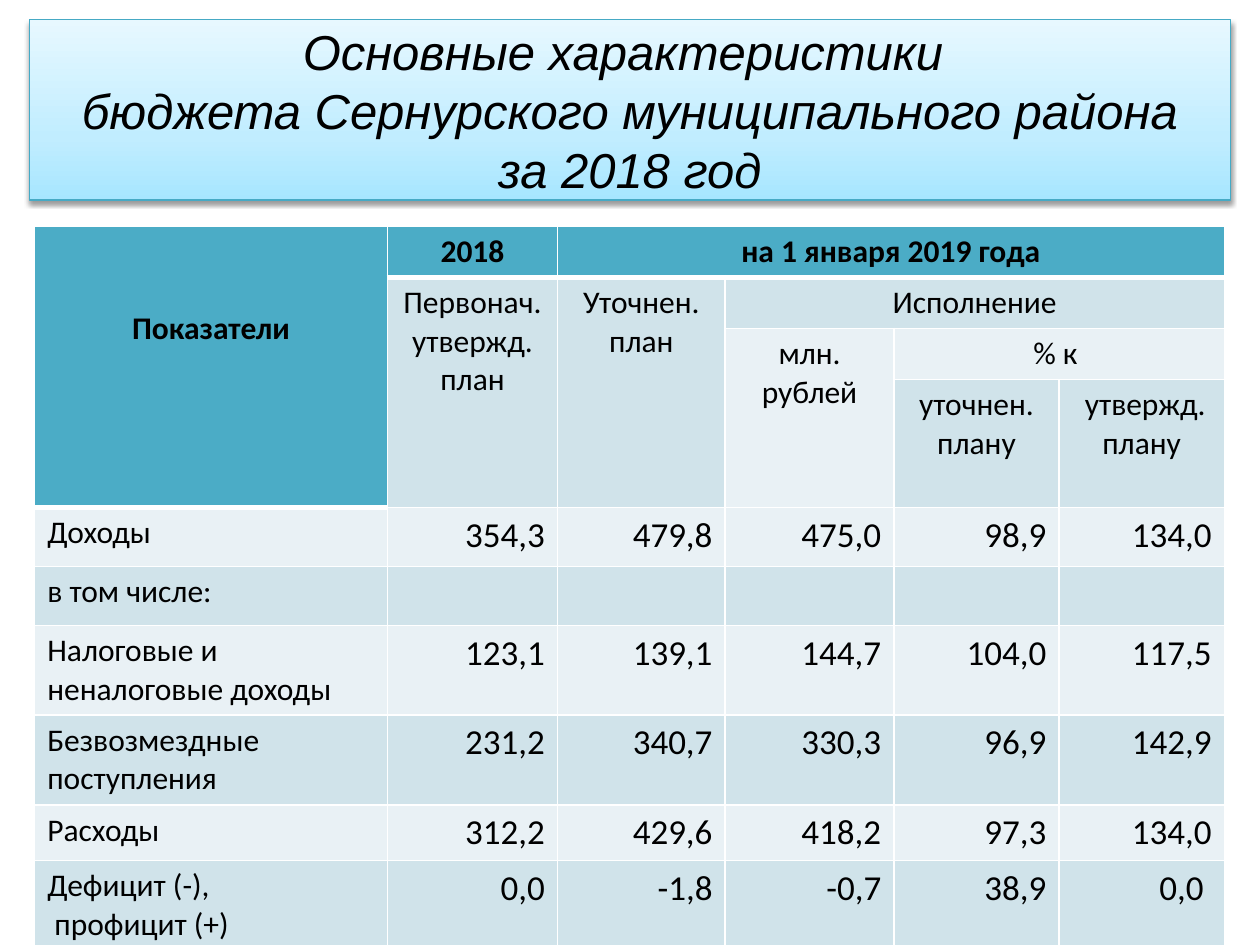
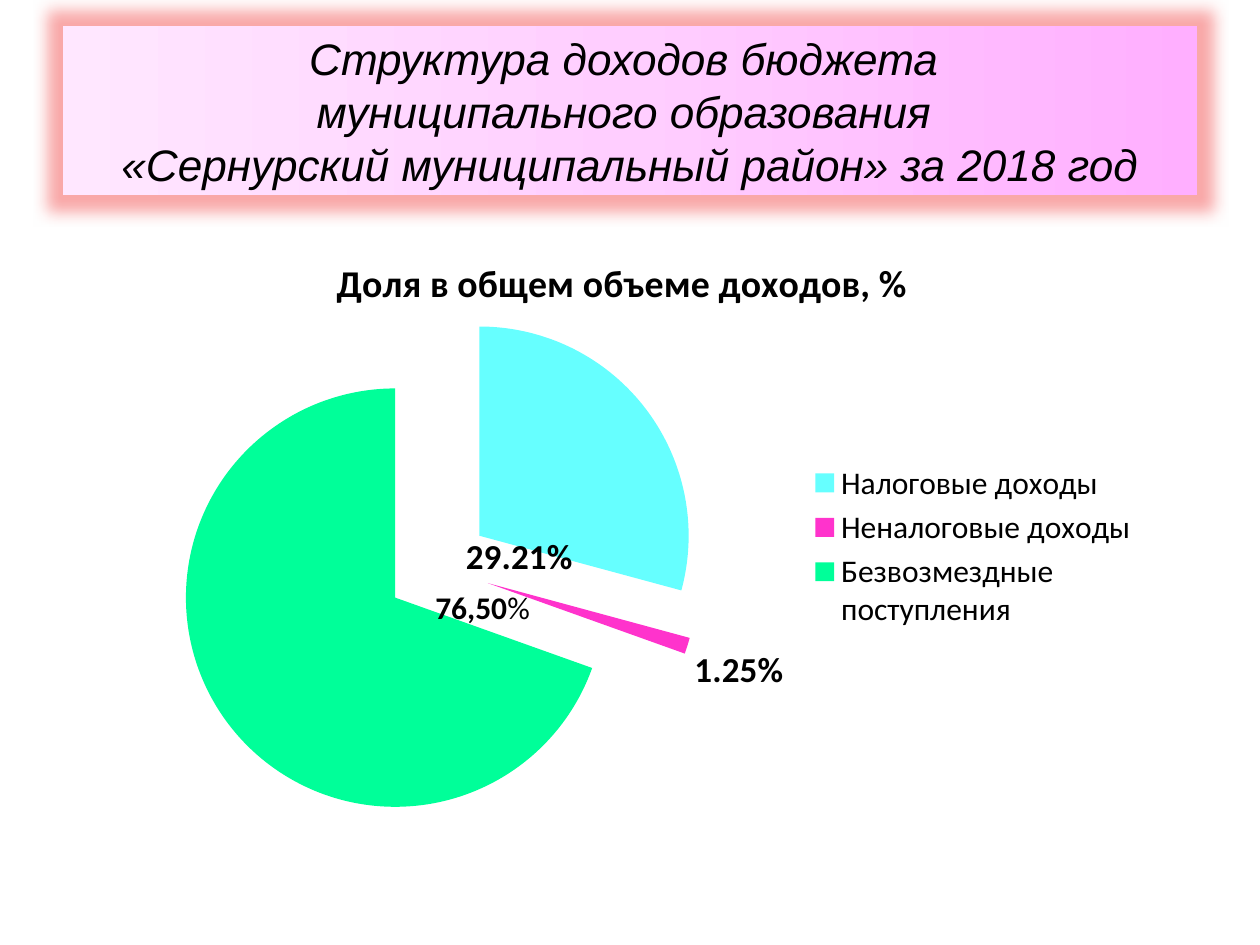
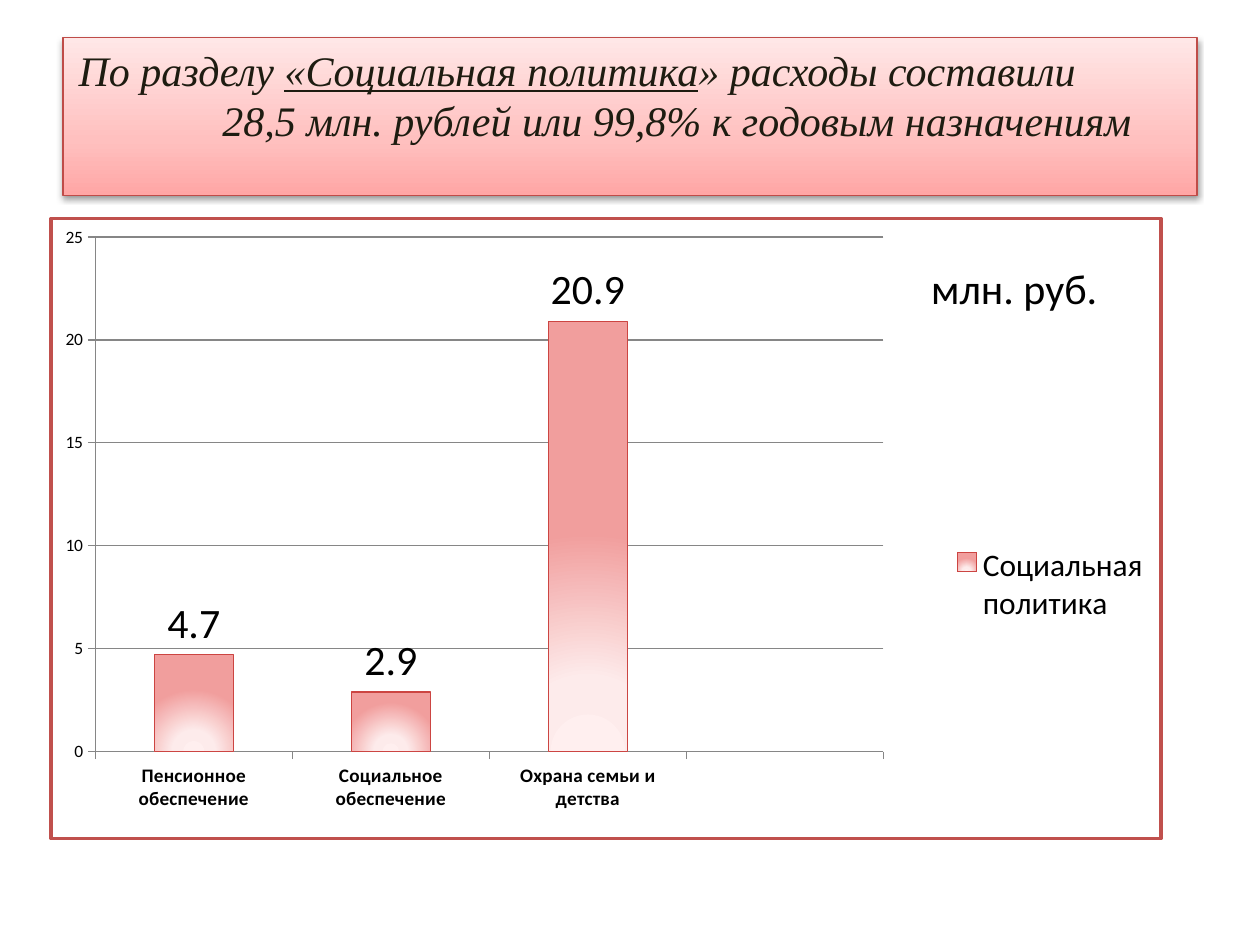
from lxml.etree import SubElement
from pptx import Presentation
from pptx.chart.data import CategoryChartData
from pptx.dml.color import RGBColor
from pptx.enum.chart import XL_CHART_TYPE, XL_LABEL_POSITION, XL_LEGEND_POSITION
from pptx.enum.text import MSO_ANCHOR, MSO_AUTO_SIZE, PP_ALIGN
from pptx.oxml import parse_xml
from pptx.oxml.ns import nsdecls, qn
from pptx.util import Cm, Pt

HUES = {
    "ink": "000000", "dark": "1E1C11", "white": "FFFFFF",
    "head": "4BACC6", "band": "D0E3EA", "pale": "E9F1F5",
    "teal": "46AAC5", "brick": "BF4C48", "frame": "C0504D",
    "edge": "CC4542", "glow": "F02626", "axis": "868686",
    "cyan": "66FFFF", "pink": "FF33CC", "green": "00FF99",
}
BLUES = [(0, "A7E6FF"), (35, "C1EDFF"), (100, "E7F8FF")]
PINKS = [(0, "FFAFFF"), (50, "FFCEFF"), (100, "FFE7FF")]
REDS = [(0, "FFA6A5"), (35, "FFC0BF"), (100, "FFE7E7")]
ROSES = [(0, "FFEFEF"), (34, "FDEBEB"), (100, "F19E9D")]
CIRCLE = ('<a:path path="circle"><a:fillToRect l="50000" t="155000" '
          'r="50000" b="-55000"/></a:path>')
SHADE = ('<a:outerShdw blurRad="40000" dist="20000" dir="5400000" rotWithShape="0">'
         '<a:srgbClr val="{ink}"><a:alpha val="38000"/></a:srgbClr></a:outerShdw>')
GLOW = ('<a:glow rad="228600"><a:srgbClr val="{glow}"><a:alpha val="40000"/>'
        '</a:srgbClr></a:glow>')

HEADS = [
    (0, 0, 3, 0, "Показатели", "head"),
    (0, 1, 0, 1, "2018", "head"),
    (0, 2, 0, 5, "на 1 января 2019 года", "head"),
    (1, 1, 3, 1, "Первонач. утвержд. план", "band"),
    (1, 2, 3, 2, "Уточнен.\nплан", "band"),
    (1, 3, 1, 5, "Исполнение", "band"),
    (2, 3, 3, 3, "млн. рублей", "pale"),
    (2, 4, 2, 5, "% к ", "pale"),
    (3, 4, 3, 4, "уточнен. плану", "band"),
    (3, 5, 3, 5, " утвержд. плану", "band"),
]
ROWS = [
    ("Доходы", "354,3", "479,8", "475,0", "98,9", "134,0"),
    ("в том числе:", "", "", "", "", ""),
    ("Налоговые и неналоговые доходы", "123,1", "139,1", "144,7", "104,0", "117,5"),
    ("Безвозмездные поступления", "231,2", "340,7", "330,3", "96,9", "142,9"),
    ("Расходы", "312,2", "429,6", "418,2", "97,3", "134,0"),
    ("Дефицит (-),\n профицит (+)", "0,0", "-1,8", "-0,7", "38,9", "0,0 "),
]
WIDTHS = [7.11, 3.43, 3.38, 3.4, 3.33, 3.33]
HEIGHTS = [1.02, 1.02, 1.02, 2.57, 1.19, 1.19, 1.55, 1.55, 1.12, 1.04]


def tint(key):
    """Return the colour that a name stands for."""
    return RGBColor.from_string(HUES[key])


def style(font, size, face="Calibri", hue="ink", bold=False, italic=False):
    """Set the look of a font."""
    font.size, font.name = Pt(size), face
    font.bold, font.italic = bold, italic
    font.color.rgb = tint(hue)


def write(frame, text, size, align=PP_ALIGN.LEFT, **look):
    """Fill a text frame with one paragraph for each line."""
    for i, line in enumerate(text.split("\n")):
        para = frame.add_paragraph() if i else frame.paragraphs[0]
        para.alignment = align
        if line:
            run = para.add_run()
            run.text = line
            style(run.font, size, **look)


def blend(stops, way):
    """Build a gradient fill that runs along the given way."""
    marks = "".join(f'<a:gs pos="{at * 1000}"><a:srgbClr val="{hue}"/></a:gs>'
                    for at, hue in stops)
    return parse_xml(f'<a:gradFill {nsdecls("a")} rotWithShape="1">'
                     f'<a:gsLst>{marks}</a:gsLst>{way}</a:gradFill>')


def slope(turn):
    """Describe a straight gradient by its angle."""
    return f'<a:lin ang="{turn * 60000}" scaled="0"/>'


def banner(deck, box, stops, turn, effect, edge=None):
    """Add a slide whose title stands on a gradient band."""
    slide = deck.slides.add_slide(deck.slide_layouts[5])
    title = slide.shapes.title
    title.left, title.top, title.width, title.height = map(Cm, box)
    props = title.element.spPr
    props.append(blend(stops, slope(turn)))
    if edge:
        title.line.color.rgb = tint(edge)
        title.line.width = Pt(0.75)
    props.append(parse_xml(f'<a:effectLst {nsdecls("a")}>'
                           f'{effect.format(**HUES)}</a:effectLst>'))
    frame = title.text_frame
    frame.auto_size = MSO_AUTO_SIZE.NONE
    frame.vertical_anchor = MSO_ANCHOR.MIDDLE
    return slide, frame


def paint(cell, key):
    """Fill a table cell with one colour."""
    cell.fill.solid()
    cell.fill.fore_color.rgb = tint(key)


def rule(cell):
    """Draw a thick white line under a cell."""
    cell._tc.get_or_add_tcPr().insert(0, parse_xml(
        f'<a:lnB {nsdecls("a")} w="38100"><a:solidFill>'
        f'<a:srgbClr val="{HUES["white"]}"/></a:solidFill></a:lnB>'))


def grid(slide):
    """Add the budget table."""
    table = slide.shapes.add_table(len(HEIGHTS), len(WIDTHS), Cm(0.7), Cm(4.56),
                                   Cm(sum(WIDTHS)), Cm(sum(HEIGHTS))).table
    for col, width in zip(table.columns, WIDTHS):
        col.width = Cm(width)
    for row, height in zip(table.rows, HEIGHTS):
        row.height = Cm(height)
    for top, left, low, right, text, hue in HEADS:
        cell = table.cell(top, left)
        if (top, left) != (low, right):
            cell.merge(table.cell(low, right))
        paint(cell, hue)
        write(cell.text_frame, text, 18, PP_ALIGN.CENTER, bold=top == 0)
    table.cell(0, 0).margin_top = Cm(1.68)
    for j in range(len(WIDTHS)):
        rule(table.cell(0, j))
    rule(table.cell(3, 0))
    for i, row in enumerate(ROWS):
        for j, text in enumerate(row):
            cell = table.cell(i + 4, j)
            paint(cell, "band" if i % 2 else "pale")
            if j:
                write(cell.text_frame, text, 20, PP_ALIGN.RIGHT)
            else:
                write(cell.text_frame, text, 18)


def place(node, x, y, w=None, h=None, edge=True, inner=False):
    """Put a manual chart layout after the given node."""
    parts = {"layoutTarget": "inner"} if inner else {}
    if edge:
        parts.update(xMode="edge", yMode="edge")
    parts.update(x=x, y=y)
    if w:
        parts.update(w=w, h=h)
    body = "".join(f'<c:{key} val="{val}"/>' for key, val in parts.items())
    root = node.getparent()
    for old in root.findall(qn("c:layout")):
        root.remove(old)
    node.addnext(parse_xml(f'<c:layout {nsdecls("c")}><c:manualLayout>{body}'
                           '</c:manualLayout></c:layout>'))


def graph(slide, kind, box, data, size, plot):
    """Add a chart with a legend on the right."""
    chart = slide.shapes.add_chart(kind, *map(Cm, box), data).chart
    style(chart.font, size)
    chart.has_legend = True
    chart.legend.position = XL_LEGEND_POSITION.RIGHT
    chart.legend.include_in_layout = False
    style(chart.legend.font, 18)
    area = chart.element.find(".//" + qn("c:plotArea"))
    for old in area.findall(qn("c:layout")):
        area.remove(old)
    mark = SubElement(area, qn("c:layout"))
    area.insert(0, mark)
    size = dict(zip("xywh", plot))
    spot = SubElement(mark, qn("c:manualLayout"))
    for key, val in {"layoutTarget": "inner", "xMode": "edge", "yMode": "edge",
                     **size}.items():
        SubElement(spot, qn("c:" + key)).set("val", str(val))
    return chart


def pie(slide):
    """Add the pie of income shares."""
    name = "Доля в общем объеме доходов, %"
    data = CategoryChartData(number_format="0.00%")
    data.categories = ["Налоговые доходы", "Неналоговые доходы",
                       "Безвозмездные поступления"]
    data.add_series(name, [0.2921, 0.0125, 0.6953])
    chart = graph(slide, XL_CHART_TYPE.PIE, (1.42, 3.89, 21.79, 14.25), data, 18,
                  (0.06, 0.16, 0.56, 0.74))
    chart.has_title = True
    write(chart.chart_title.text_frame, name, 21.6, PP_ALIGN.CENTER, bold=True)
    chart.chart_title.include_in_layout = False
    place(chart.element.find(".//" + qn("c:title")).find(qn("c:tx")), 0.24, 0.08)
    series = chart.plots[0].series[0]
    burst = SubElement(series._element, qn("c:explosion"))
    burst.set("val", "25")
    series._element.find(qn("c:tx")).addnext(burst)
    for i, key in enumerate(["cyan", "pink", "green"]):
        fill = series.points[i].format.fill
        fill.solid()
        fill.fore_color.rgb = tint(key)
        label = series.points[i].data_label
        if i < 2:
            style(label.font, 20, bold=True)
        else:
            para = label.text_frame.paragraphs[0]
            for text, bold in [("76,50", True), ("%", False)]:
                run = para.add_run()
                run.text = text
                style(run.font, 18, bold=bold)
        label.position = (XL_LABEL_POSITION.OUTSIDE_END if i == 1
                          else XL_LABEL_POSITION.CENTER)
    moves = [(-0.04, 0.12), None, (0.16, -0.07)]
    for mark, move in zip(chart.element.iter(qn("c:dLbl")), moves):
        if move:
            place(mark.find(qn("c:idx")), *move, edge=False)


def bars(slide):
    """Add the column chart of social spending."""
    data = CategoryChartData(number_format="General")
    data.categories = ["Пенсионное обеспечение", "Социальное обеспечение",
                       "Охрана семьи и детства", ""]
    data.add_series("Социальная политика", [4.7, 2.9, 20.9, None])
    chart = graph(slide, XL_CHART_TYPE.COLUMN_CLUSTERED, (0.99, 4.37, 22.45, 12.57),
                  data, 10, (0.04, 0.03, 0.71, 0.83))
    chart.has_title = False
    place(chart.element.find(".//" + qn("c:legendPos")), 0.81, 0.52, 0.18, 0.14)
    chart.element.find(qn("c:chart")).addnext(parse_xml(
        f'<c:spPr {nsdecls("c", "a")}><a:solidFill><a:srgbClr val="{HUES["white"]}"/>'
        f'</a:solidFill><a:ln w="25400"><a:solidFill><a:srgbClr val="{HUES["frame"]}"/>'
        '</a:solidFill></a:ln></c:spPr>'))
    plot = chart.plots[0]
    plot.gap_width = 150
    plot.vary_by_categories = False
    series = plot.series[0]
    line = series.format.line
    line.color.rgb = tint("edge")
    line.width = Pt(0.75)
    series._element.find(qn("c:spPr")).insert(0, blend(ROSES, CIRCLE))
    labels = series.data_labels
    labels.show_value = True
    labels.position = XL_LABEL_POSITION.OUTSIDE_END
    style(labels.font, 24)
    axis, scale = chart.category_axis, chart.value_axis
    style(axis.tick_labels.font, 11, bold=True)
    scale.minimum_scale, scale.maximum_scale, scale.major_unit = 0, 25, 5
    for item in (axis, scale, scale.major_gridlines):
        item.format.line.color.rgb = tint("axis")


def main():
    """Build the deck and save it."""
    deck = Presentation()
    deck.slide_width, deck.slide_height = Cm(25.4), Cm(19.05)

    slide, frame = banner(deck, (0.59, 0.4, 24.21, 3.63), BLUES, 270, SHADE, "teal")
    frame.word_wrap = False
    write(frame, "Основные характеристики \nбюджета Сернурского муниципального района\n"
          "за 2018 год", 28, PP_ALIGN.CENTER, face="Arial", italic=True)
    grid(slide)

    slide, frame = banner(deck, (1.27, 0.53, 22.86, 3.4), PINKS, 180, GLOW)
    frame.word_wrap = False
    write(frame, "Структура доходов бюджета \nмуниципального образования \n"
          "«Сернурский муниципальный район» за 2018 год", 25.2, PP_ALIGN.CENTER,
          face="Arial", italic=True)
    pie(slide)

    slide, frame = banner(deck, (1.27, 0.76, 22.86, 3.18), REDS, 270, SHADE, "brick")
    frame.vertical_anchor = MSO_ANCHOR.TOP
    look = {"face": "Times New Roman", "italic": True, "hue": "dark"}
    write(frame, "По разделу \n28,5 млн. рублей или 99,8% к годовым назначениям",
          24, **look)
    first, second = frame.paragraphs
    for text, under in [("«Социальная политика", True), ("» расходы составили", False)]:
        run = first.add_run()
        run.text = text
        style(run.font, 24, **look)
        run.font.underline = under
    first._p.get_or_add_pPr().set("marL", str(Cm(0.06)))
    second._p.get_or_add_pPr().set("marL", str(Cm(2.96)))
    bars(slide)
    note = slide.shapes.add_textbox(Cm(18.26), Cm(5.16), Cm(4.37), Cm(1.27)).text_frame
    note.word_wrap = True
    note.auto_size = MSO_AUTO_SIZE.SHAPE_TO_FIT_TEXT
    write(note, "млн. руб.", 24, PP_ALIGN.CENTER)

    deck.save("out.pptx")


if __name__ == "__main__":
    main()
